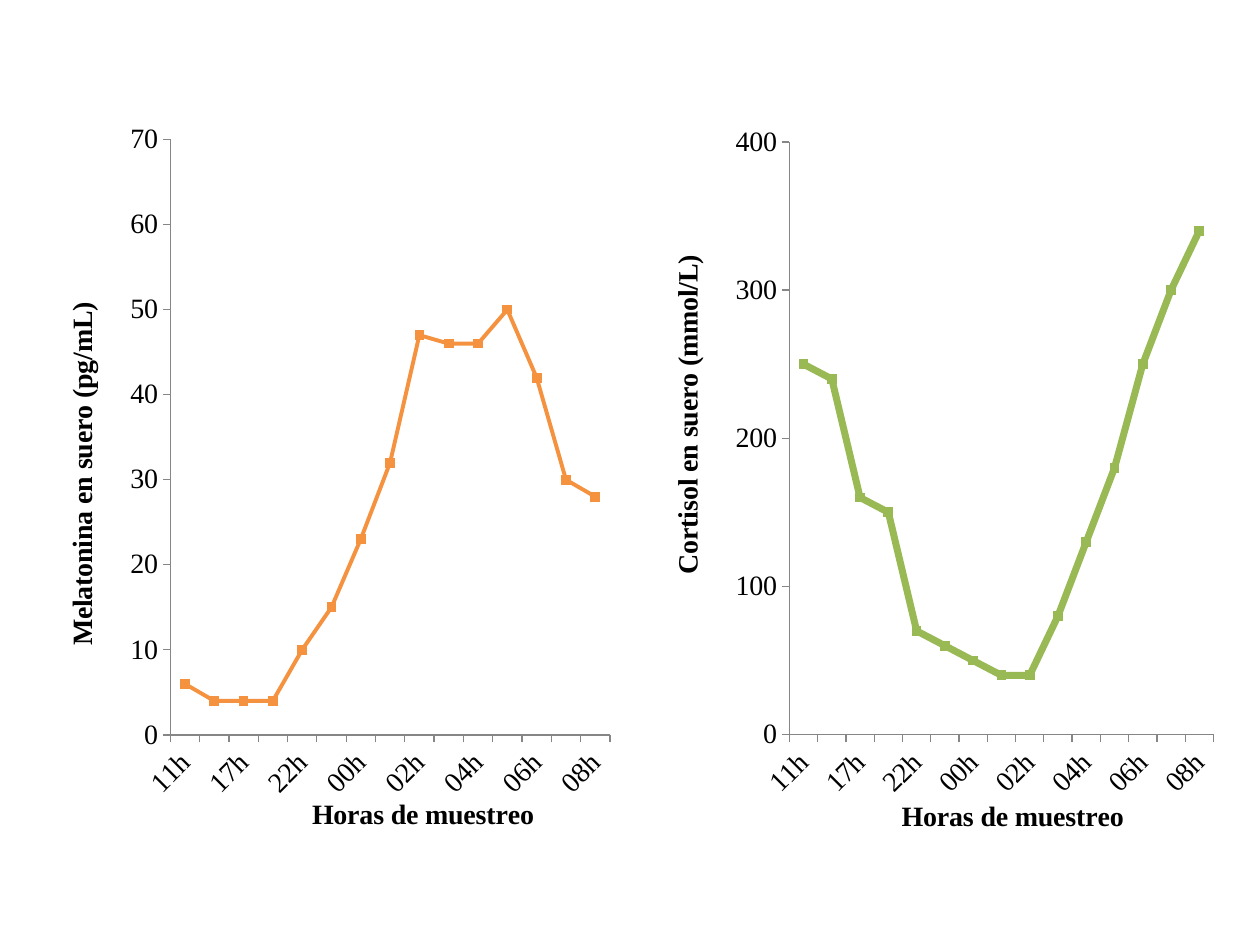
from lxml import etree
from pptx import Presentation
from pptx.chart.data import CategoryChartData
from pptx.dml.color import RGBColor
from pptx.enum.chart import XL_CHART_TYPE, XL_MARKER_STYLE, XL_TICK_MARK
from pptx.oxml.ns import qn
from pptx.util import Cm, Pt

LINE_CHART = XL_CHART_TYPE.LINE_MARKERS_STACKED
SQUARE = XL_MARKER_STYLE.SQUARE
OUTSIDE, NO_TICK = XL_TICK_MARK.OUTSIDE, XL_TICK_MARK.NONE

BLACK = RGBColor(0x00, 0x00, 0x00)
AXIS_GRAY = RGBColor(0x86, 0x86, 0x86)
ORANGE = RGBColor(0xF5, 0x92, 0x40)
GREEN = RGBColor(0x98, 0xB9, 0x54)
FONT = "Times New Roman"
TEXT_SIZE = Pt(16)

HOURS = ["11h", "14h", "17h", "20h", "22h", "23h", "00h", "01h",
         "02h", "03h", "04h", "05h", "06h", "07h", "08h"]
# Frames are in centimetres, positions inside a chart in percent of its size
CHARTS = [
    dict(title="Melatonina en suero (pg/mL)", color=ORANGE, width=2.25,
         values=[6, 4, 4, 4, 10, 15, 23, 32, 47, 46, 46, 50, 42, 30, 28],
         maximum=70, step=10, frame=(1.09, 2.34, 11.86, 14.58),
         plot=(19.75, 3.25, 74.75, 82.4),
         hours_at=(43, 93.4), title_at=(0.8, 25.1)),
    dict(title="Cortisol en suero (mmol/L)", color=GREEN, width=4,
         values=[250, 240, 160, 150, 70, 60, 50, 40, 40, 80, 130, 180, 250, 300, 340],
         maximum=400, step=100, frame=(13.3, 2.52, 11.51, 14.81),
         plot=(22.7, 2.3, 74.3, 80.7),
         hours_at=(41.5, 90.9), title_at=(0.8, 17)),
]


def set_layout(parent, index, position, inner=False):
    """Place a chart part by percents of the chart: x, y and optionally w, h."""
    for old_layout in parent.findall(qn("c:layout")):
        parent.remove(old_layout)
    layout = etree.Element(qn("c:layout"))
    manual = etree.SubElement(layout, qn("c:manualLayout"))
    if inner:
        etree.SubElement(manual, qn("c:layoutTarget"), val="inner")
    for name in ("xMode", "yMode"):
        etree.SubElement(manual, qn(f"c:{name}"), val="edge")
    for name, percent in zip("xywh", position):
        etree.SubElement(manual, qn(f"c:{name}"), val=f"{percent / 100:.4f}")
    parent.insert(index, layout)


def add_axis_title(axis, text, position, rotation=0, size=TEXT_SIZE, bold=True):
    text_frame = axis.axis_title.text_frame
    text_frame.text = text
    font = text_frame.paragraphs[0].runs[0].font
    font.name, font.size, font.bold = FONT, size, bold
    font.color.rgb = BLACK
    body = axis.axis_title._element.find(".//" + qn("a:bodyPr"))
    body.set("rot", str(rotation * 60000))
    body.set("vert", "horz")
    set_layout(axis.axis_title._element, 1, position)


presentation = Presentation()
presentation.slide_width, presentation.slide_height = Cm(25.4), Cm(19.05)
slide = presentation.slides.add_slide(presentation.slide_layouts[6])

for item in CHARTS:
    data = CategoryChartData()
    data.categories = HOURS
    data.add_series("Series 1", item["values"])
    frame = [Cm(length) for length in item["frame"]]
    chart = slide.shapes.add_chart(LINE_CHART, *frame, data).chart
    chart.has_legend = False
    chart.has_title = False
    chart.font.name, chart.font.size = FONT, TEXT_SIZE
    chart.font.color.rgb = BLACK
    chart.plots[0].vary_by_categories = False
    set_layout(chart._chartSpace.chart.plotArea, 0, item["plot"], inner=True)

    series = chart.plots[0].series[0]
    series.smooth = False
    series.format.line.color.rgb = item["color"]
    series.format.line.width = Pt(item["width"])
    series.marker.style, series.marker.size = SQUARE, 5
    series.marker.format.fill.solid()
    series.marker.format.fill.fore_color.rgb = item["color"]
    series.marker.format.line.color.rgb = item["color"]

    hours_axis, value_axis = chart.category_axis, chart.value_axis
    for axis in (hours_axis, value_axis):
        axis.has_major_gridlines = False
        axis.major_tick_mark, axis.minor_tick_mark = OUTSIDE, NO_TICK
        axis.format.line.color.rgb = AXIS_GRAY
        axis.tick_labels.font.name = FONT
        axis.tick_labels.font.size = TEXT_SIZE
        axis.tick_labels.font.color.rgb = BLACK
    value_axis.minimum_scale, value_axis.maximum_scale = 0, item["maximum"]
    value_axis.major_unit = item["step"]

    # Slanted labels, one for every second hour
    hours_element = hours_axis._element
    hours_element.find(qn("c:txPr")).find(qn("a:bodyPr")).set("rot", str(-45 * 60000))
    label_skip = etree.Element(qn("c:tickLblSkip"), val="2")
    hours_element.find(qn("c:noMultiLvlLbl")).addprevious(label_skip)

    add_axis_title(hours_axis, "Horas de muestreo", item["hours_at"])
    add_axis_title(value_axis, item["title"], item["title_at"], rotation=-90)

presentation.save("out.pptx")
